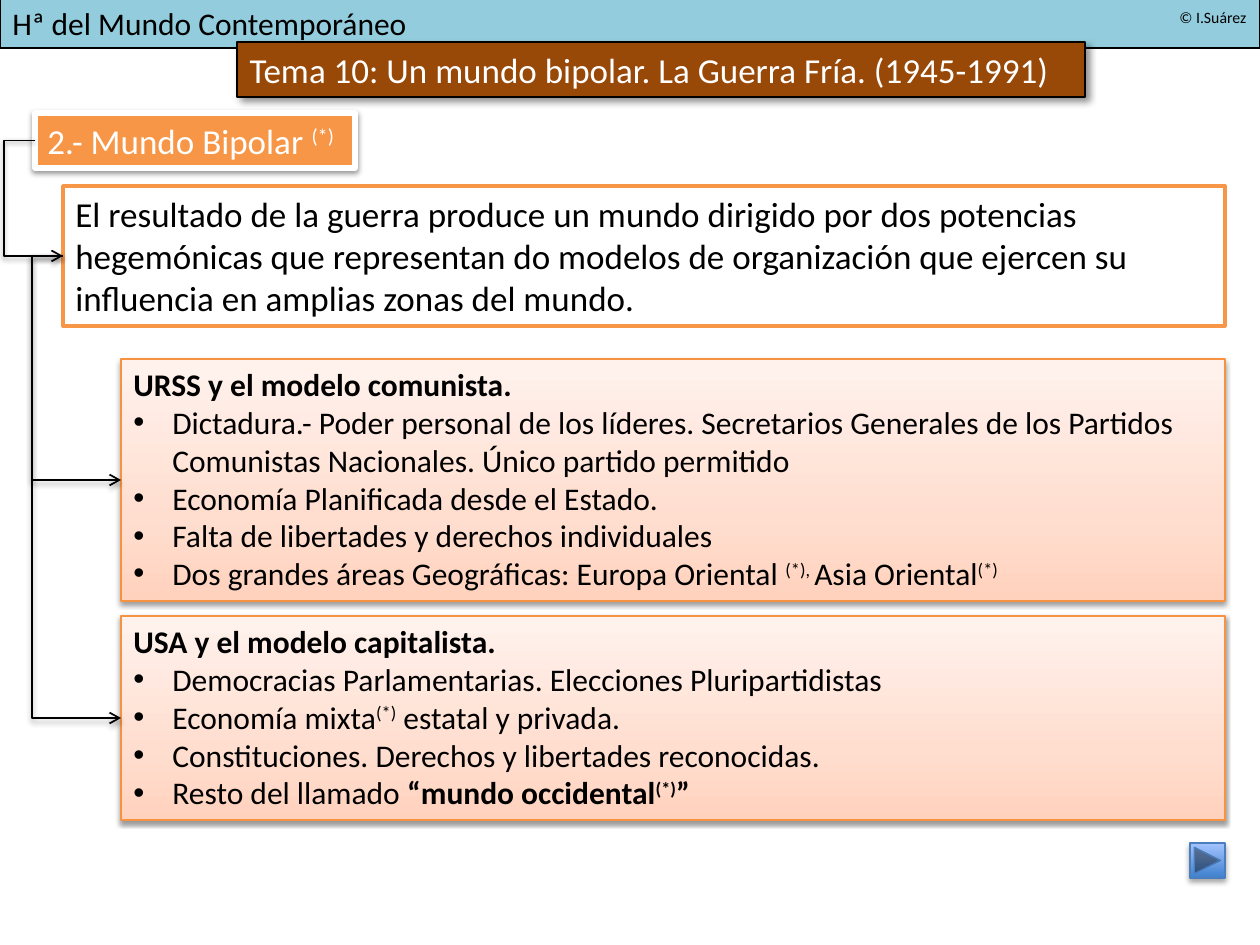
from lxml import etree
from pptx import Presentation
from pptx.dml.color import RGBColor
from pptx.enum.shapes import MSO_CONNECTOR, MSO_SHAPE
from pptx.enum.text import MSO_ANCHOR, MSO_AUTO_SIZE, PP_ALIGN
from pptx.oxml import parse_xml
from pptx.oxml.ns import qn
from pptx.util import Pt

RECT, NEXT = MSO_SHAPE.RECTANGLE, MSO_SHAPE.ACTION_BUTTON_FORWARD_OR_NEXT
ELBOW = MSO_CONNECTOR.ELBOW
TOP, LEFT, FIXED = MSO_ANCHOR.TOP, PP_ALIGN.LEFT, MSO_AUTO_SIZE.NONE

BLACK = RGBColor(0x00, 0x00, 0x00)
WHITE = RGBColor(0xFF, 0xFF, 0xFF)
SKY = RGBColor(0x93, 0xCD, 0xDD)
BROWN = RGBColor(0x98, 0x48, 0x07)
ORANGE = RGBColor(0xF7, 0x96, 0x46)
EDGE = RGBColor(0xF6, 0x92, 0x40)
BLUE = RGBColor(0x4B, 0x7E, 0xBC)
PEACH = [(0, RGBColor(0xFF, 0xD2, 0xBD)), (35, RGBColor(0xFF, 0xDE, 0xD0)),
         (100, RGBColor(0xFF, 0xF2, 0xED))]
AZURE = [(0, RGBColor(0x3F, 0x80, 0xCE)), (100, RGBColor(0xA4, 0xC4, 0xFF))]

# Shadows: opacity %, blur pt, distance pt, angle
SOFT = (38, 3.1, 1.6, 90)
DEEP = (43, 4, 3, 45)
FAINT = (35, 3.1, 1.8, 90)

# A paragraph is a list of (text, style) runs: b = bold, s = superscript
COURSE = [[("Hª del Mundo Contemporáneo", "")]]
TITLE = [[("Tema 10: Un mundo bipolar. La Guerra Fría. (1945-1991)", "")]]
AUTHOR = [[("© I.Suárez", "")]]
SECTION = [[("2.- Mundo Bipolar ", ""), ("(*)", "s")]]
INTRO = [[("El resultado de la guerra produce un mundo dirigido por dos "
           "potencias hegemónicas que representan do modelos de organización "
           "que ejercen su influencia en amplias zonas del mundo.", "")]]
MODELS = [
    (359, 242, [
        [("URSS y el modelo comunista.", "b")],
        [("Dictadura.- Poder personal de los líderes. Secretarios Generales "
          "de los Partidos Comunistas Nacionales. Único partido permitido", "")],
        [("Economía Planificada desde el Estado.", "")],
        [("Falta de libertades y derechos individuales", "")],
        [("Dos grandes áreas Geográficas: Europa Oriental ", ""),
         ("(*), ", "s"), ("Asia Oriental", ""), ("(*)", "s")],
    ]),
    (616, 204, [
        [("USA y el modelo capitalista.", "b")],
        [("Democracias Parlamentarias. Elecciones Pluripartidistas", "")],
        [("Economía mixta", ""), ("(*)", "s"), (" estatal y privada.", "")],
        [("Constituciones. Derechos y libertades reconocidas.", "")],
        [("Resto del llamado ", ""), ("“mundo occidental", "b"),
         ("(*)", "bs"), ("”", "b")],
    ]),
]
INDENT = 39
REACH = 31  # how far each elbow runs left of its start


def px(n):
    return round(n * 914400 / 126)


def shade(shape, look):
    """Replace the theme effect by the given shadow, or by none."""
    props = shape.element.spPr
    for old in props.findall(qn("a:effectLst")):
        props.remove(old)
    effects = etree.SubElement(props, qn("a:effectLst"))
    if look:
        alpha, blur, dist, angle = look
        outer = etree.SubElement(
            effects, qn("a:outerShdw"), blurRad=str(Pt(blur)),
            dist=str(Pt(dist)), dir=str(angle * 60000), rotWithShape="0")
        color = etree.SubElement(outer, qn("a:srgbClr"), val=str(BLACK))
        etree.SubElement(color, qn("a:alpha"), val=str(alpha * 1000))


def blend(shape, stops):
    """Fill with a gradient that rises from the bottom edge."""
    shape.fill.gradient()
    shape.fill.gradient_angle = 90
    group = shape.element.spPr.find(".//" + qn("a:gsLst"))
    for old in list(group):
        group.remove(old)
    for pos, color in stops:
        stop = etree.SubElement(group, qn("a:gs"), pos=str(pos * 1000))
        etree.SubElement(stop, qn("a:srgbClr"), val=str(color))


def place(shape, x, y, w, h):
    shape.left, shape.top, shape.width, shape.height = map(px, (x, y, w, h))


def paint(shape, fill, line, width, shadow=None):
    if isinstance(fill, list):
        blend(shape, fill)
    else:
        shape.fill.solid()
        shape.fill.fore_color.rgb = fill
    shape.line.color.rgb = line
    shape.line.width = Pt(width)
    shade(shape, shadow)


def write(shape, paras, size, color=BLACK, wrap=True):
    """Write the paragraphs; all after the first are bulleted."""
    frame = shape.text_frame
    frame.word_wrap = wrap
    frame.auto_size = FIXED
    frame.vertical_anchor = TOP
    for i, runs in enumerate(paras):
        para = frame.add_paragraph() if i else frame.paragraphs[0]
        para.alignment = LEFT
        if i:
            props = para._p.get_or_add_pPr()
            props.set("marL", str(px(INDENT)))
            props.set("indent", str(-px(INDENT)))
            etree.SubElement(props, qn("a:buFont"), typeface="Arial")
            etree.SubElement(props, qn("a:buChar"), char="•")
        for text, style in runs:
            run = para.add_run()
            run.text = text
            font = run.font
            font.name, font.size = "Calibri", Pt(size)
            font.bold = "b" in style
            font.color.rgb = color
            if "s" in style:
                run._r.get_or_add_rPr().set("baseline", "30000")


def box(shapes, spot, *look, kind=RECT):
    shape = shapes.add_shape(kind, *map(px, spot))
    paint(shape, *look)
    return shape


def link(shapes, start, end):
    """Join the left middles of two (x, y, w, h) spots by an elbow arrow."""
    (x1, y1), (x2, y2) = [(x, y + h / 2) for x, y, w, h in (start, end)]
    arrow = shapes.add_connector(ELBOW, px(x1), px(y1), px(x2), px(y2))
    arrow.line.color.rgb = BLACK
    arrow.line.width = Pt(1)
    etree.SubElement(arrow.line._get_or_add_ln(), qn("a:tailEnd"), type="arrow")
    guides = arrow.element.spPr.find(qn("a:prstGeom")).get_or_add_avLst()
    bend = round(-REACH / (x2 - x1) * 100000)
    etree.SubElement(guides, qn("a:gd"), name="adj1", fmla=f"val {bend}")
    shade(arrow, SOFT)


def main():
    deck = Presentation()
    deck.slide_width, deck.slide_height = px(1260), px(945)
    shapes = deck.slides.add_slide(deck.slide_layouts[5]).shapes

    title = shapes.title
    place(title, 237, 42, 848, 55)
    paint(title, BROWN, BLACK, 0.75, DEEP)
    write(title, TITLE, 20, WHITE)

    bar = box(shapes, (0, -2, 1260, 50), SKY, BLACK, 0.75)
    write(bar, COURSE, 18)
    title.element.addprevious(bar.element)

    author = shapes.add_textbox(*map(px, (1167, 2, 93, 31)))
    write(author, AUTHOR, 9, wrap=False)

    head = (35, 113, 320, 55)
    write(box(shapes, head, ORANGE, WHITE, 3, SOFT), SECTION, 20, WHITE)
    intro = (63, 186, 1162, 140)
    write(box(shapes, intro, WHITE, ORANGE, 2), INTRO, 20)

    links = [(head, intro)]
    for y, h, paras in MODELS:
        spot = (121, y, 1104, h)
        write(box(shapes, spot, PEACH, EDGE, 0.75, SOFT), paras, 18)
        links.append((intro, spot))
    for start, end in links:
        link(shapes, start, end)

    box(shapes, (1190, 843, 35, 35), AZURE, BLUE, 0.75, FAINT, kind=NEXT)
    deck.save("out.pptx")


if __name__ == "__main__":
    main()
